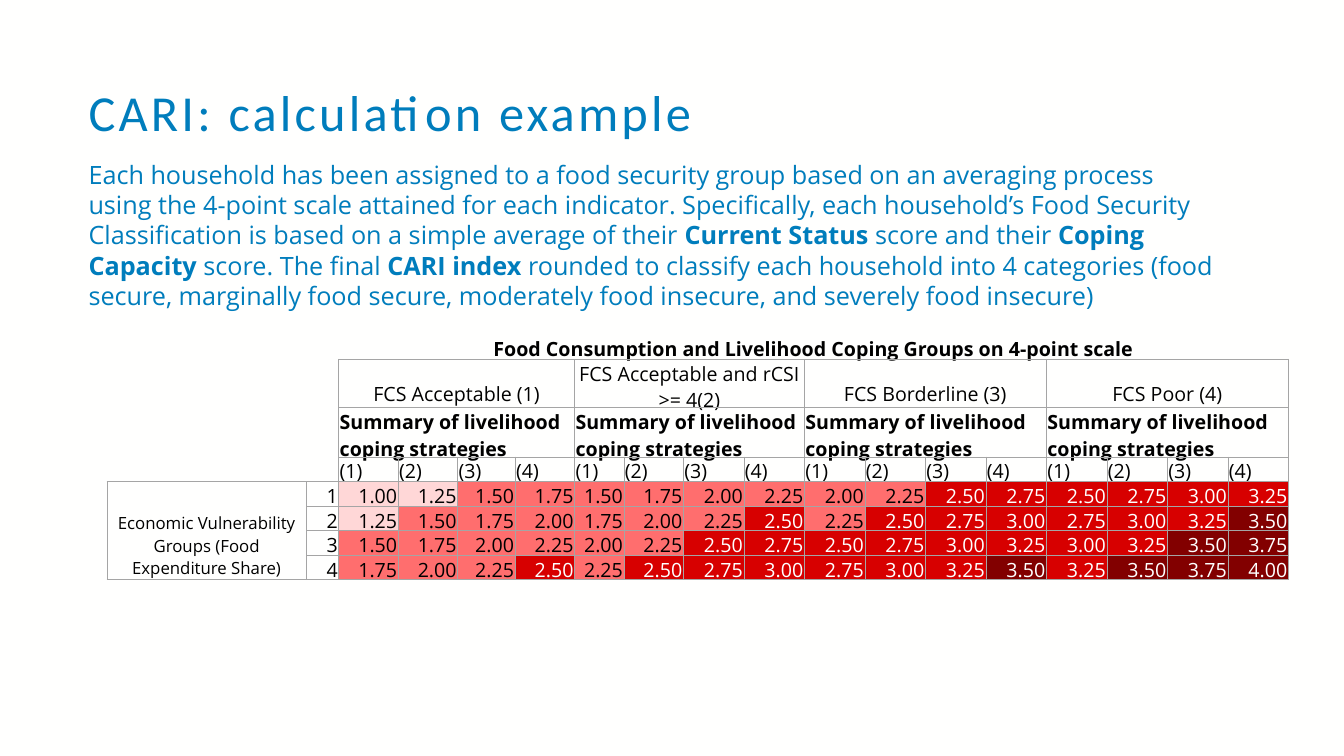
"""Build the CARI calculation example slide with its scoring matrix."""
import pptx
import pptx.util
import pptx.dml.color
import pptx.enum.text
import lxml.etree

PX = 9144
THEME = {
    "background": "FFFFFE", "heading": "007DBC", "text": "000000", "inverse": "FFFFFF",
    "border": "A5A5A5", "levels": ["FFD7D7", "FF6E6E", "D70000", "820000"],
    "title_font": "Calibri", "body_font": "Open Sans",
    "title_size": 36, "body_size": 18, "cell_size": 14, "label_size": 12,
}
A = "{http://schemas.openxmlformats.org/drawingml/2006/main}"
PP = pptx.enum.text.PP_ALIGN
MIDDLE = pptx.enum.text.MSO_ANCHOR.MIDDLE
BOTTOM = pptx.enum.text.MSO_ANCHOR.BOTTOM
rgb = pptx.dml.color.RGBColor.from_string


def add_run(p, text, size, color, bold=False, font=THEME["body_font"]):
    r = p.add_run()
    r.text = text
    r.font.name = font
    r.font.size = pptx.util.Pt(size)
    r.font.bold = bold
    r.font.color.rgb = rgb(color)
    return r


def write_cell(cell, text, align, color=THEME["text"], size=THEME["cell_size"], bold=False):
    p = cell.text_frame.paragraphs[0]
    p.alignment = align
    add_run(p, text, size, color, bold)


prs = pptx.Presentation()
prs.slide_width, prs.slide_height = 1333 * PX, 750 * PX
s = prs.slides.add_slide(prs.slide_layouts[6])
s.background.fill.solid()
s.background.fill.fore_color.rgb = rgb(THEME["background"])

title = s.shapes.add_textbox(78 * PX, 78 * PX, 1209 * PX, 72 * PX)
tf = title.text_frame
tf.word_wrap = True
tf.vertical_anchor = MIDDLE
p = tf.paragraphs[0]
p.line_spacing = 0.9
r = add_run(p, "CARI: calculation example", THEME["title_size"], THEME["heading"],
            font=THEME["title_font"])
r.font._element.set("spc", "230")

explanation = [
    [("Each household has been assigned to a food security group based on an averaging process", False)],
    [("using the 4-point scale attained for each indicator. Specifically, each household’s Food Security", False)],
    [("Classification is based on a simple average of their ", False), ("Current Status ", True),
     ("score and their ", False), ("Coping", True)],
    [("Capacity ", True), ("score. The final ", False), ("CARI index ", True),
     ("rounded to classify each household into 4 categories (food secure, marginally food secure, "
      "moderately food insecure, and severely food insecure)", False)],
]
body = s.shapes.add_textbox(78 * PX, 153 * PX, 1164 * PX, 162 * PX)
tf = body.text_frame
tf.word_wrap = True
for i, runs in enumerate(explanation):
    p = tf.add_paragraph() if i else tf.paragraphs[0]
    for text, bold in runs:
        add_run(p, text, THEME["body_size"], THEME["heading"], bold)

col_widths = [198, 32, 59, 59, 57, 59, 49] + [59] + [60] * 10
row_heights = [24, 48, 49] + [24] * 5
frame = s.shapes.add_table(len(row_heights), len(col_widths), 106 * PX, 332 * PX,
                           sum(col_widths) * PX, sum(row_heights) * PX)
matrix = frame.table
matrix.first_row = matrix.horz_banding = False
for column, width in zip(matrix.columns, col_widths):
    column.width = width * PX
for row, height in zip(matrix.rows, row_heights):
    row.height = height * PX

for row in range(len(row_heights)):
    for col in range(len(col_widths)):
        cell = matrix.cell(row, col)
        cell.margin_left = cell.margin_right = cell.margin_top = PX
        cell.margin_bottom = 0
        cell.vertical_anchor = BOTTOM
        if row == 0:
            sides = "B" if col > 1 else ""
        else:
            sides = "RB" if row < 4 and col < 2 else "LRTB"
        tc_pr = cell._tc.get_or_add_tcPr()
        for side in "LRTB":
            ln = lxml.etree.SubElement(tc_pr, f"{A}ln{side}", w="6350")
            if side in sides:
                fill = lxml.etree.SubElement(ln, f"{A}solidFill")
                lxml.etree.SubElement(fill, f"{A}srgbClr", val=THEME["border"])
            else:
                lxml.etree.SubElement(ln, f"{A}noFill")
        cell.fill.background()
        lxml.etree.SubElement(cell.text_frame.paragraphs[0]._p, f"{A}endParaRPr",
                              sz=str(THEME["cell_size"] * 100))

matrix.cell(0, 0).merge(matrix.cell(0, 1))
matrix.cell(0, 2).merge(matrix.cell(0, 17))
matrix.cell(1, 0).merge(matrix.cell(3, 1))
matrix.cell(4, 0).merge(matrix.cell(7, 0))
write_cell(matrix.cell(0, 2), "Food Consumption and Livelihood Coping Groups on 4-point scale",
           PP.CENTER, bold=True)
write_cell(matrix.cell(4, 0), "Economic Vulnerability Groups (Food Expenditure Share)",
           PP.CENTER, size=THEME["label_size"])
for econ in range(1, 5):
    write_cell(matrix.cell(3 + econ, 1), str(econ), PP.RIGHT)

fcs_groups = ["FCS Acceptable (1)", "FCS Acceptable and rCSI >= 4(2)",
              "FCS Borderline (3)", "FCS Poor (4)"]
for fcs, group in enumerate(fcs_groups, 1):
    first = 4 * fcs - 2
    for row, text, align, bold in [
            (1, group, PP.CENTER, False),
            (2, "Summary of livelihood coping strategies", PP.LEFT, True)]:
        matrix.cell(row, first).merge(matrix.cell(row, first + 3))
        write_cell(matrix.cell(row, first), text, align, bold=bold)
    for coping in range(1, 5):
        col = first + coping - 1
        write_cell(matrix.cell(3, col), f"({coping})", PP.LEFT)
        for econ in range(1, 5):
            score = fcs / 2 + (coping + econ) / 4
            level = int(score + 0.5)
            cell = matrix.cell(3 + econ, col)
            write_cell(cell, f"{score:.2f}", PP.RIGHT,
                       THEME["inverse"] if level > 2 else THEME["text"])
            cell.fill.solid()
            cell.fill.fore_color.rgb = rgb(THEME["levels"][level - 1])

prs.save("out.pptx")
